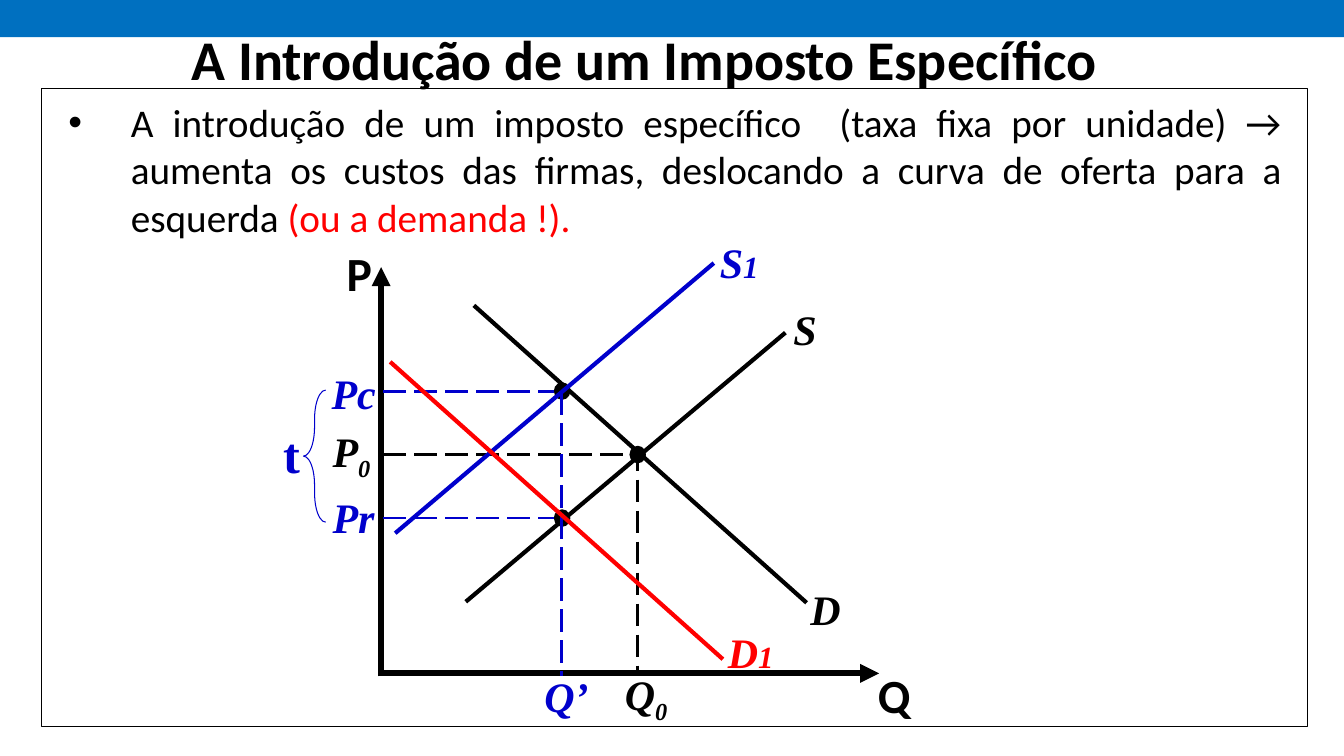
from lxml.etree import SubElement
from pptx import Presentation
from pptx.dml.color import RGBColor
from pptx.enum.dml import MSO_LINE
from pptx.enum.shapes import MSO_CONNECTOR, MSO_SHAPE
from pptx.enum.text import MSO_ANCHOR, MSO_AUTO_SIZE, PP_ALIGN
from pptx.oxml.ns import qn
from pptx.util import Inches, Pt

COLORS = {"band": "0070C0", "black": "000000", "white": "FFFFFF",
          "taxed": "0000CC", "demand": "FF0000"}
CURVE_LABEL = {"name": "Times New Roman", "size": Pt(30), "bold": True, "italic": True}
SMALL_LABEL = {**CURVE_LABEL, "size": Pt(22)}
AXIS_LABEL = {"name": "Calibri", "size": Pt(34), "bold": True}
TAX_LABEL = {"name": "Times New Roman", "size": Pt(36), "bold": True}
BODY = {"name": "Calibri", "size": Pt(28)}
TITLE = {"name": "Calibri", "size": Pt(40), "bold": True}

AXIS_X = 3.8
AXIS_FOOT = 6.71
CURVE_WIDTH = 3
GUIDE_WIDTH = 2
AXIS_WIDTH = 4.5
DOT_WIDTH, DOT_HEIGHT = 0.15, 0.16


def rgb(color):
    return RGBColor.from_string(COLORS[color])


def add_run(paragraph, wording, color, style, baseline=None):
    run = paragraph.add_run()
    run.text = wording
    for attribute, value in style.items():
        setattr(run.font, attribute, value)
    run.font.color.rgb = rgb(color)
    if baseline:
        run._r.get_or_add_rPr().set("baseline", str(baseline))


def add_text(slide, place, wrap=True, anchor=MSO_ANCHOR.TOP, align=PP_ALIGN.LEFT):
    frame = slide.shapes.add_textbox(*map(Inches, place)).text_frame
    settings = {"word_wrap": wrap, "vertical_anchor": anchor,
                "auto_size": MSO_AUTO_SIZE.NONE if wrap else MSO_AUTO_SIZE.SHAPE_TO_FIT_TEXT}
    for attribute, value in settings.items():
        setattr(frame, attribute, value)
    paragraph = frame.paragraphs[0]
    paragraph.alignment = align
    return paragraph


def add_label(slide, place, wording, color="black", style=CURVE_LABEL,
              index="", index_style=CURVE_LABEL, baseline=None):
    paragraph = add_text(slide, place, wrap=False)
    add_run(paragraph, wording, color, style)
    if index:
        add_run(paragraph, index, color, index_style, baseline)


def add_figure(slide, preset, place, fill=None, outline=None, width=1):
    figure = slide.shapes.add_shape(preset, *map(Inches, place))
    figure.shadow.inherit = False
    if fill:
        figure.fill.solid()
        figure.fill.fore_color.rgb = rgb(fill)
    else:
        figure.fill.background()
    if outline:
        figure.line.color.rgb = rgb(outline)
        figure.line.width = Pt(width)
    else:
        figure.line.fill.background()
    return figure


def add_line(slide, start, end, color="black", width=CURVE_WIDTH, dash=None, arrow=False):
    connector = slide.shapes.add_connector(
        MSO_CONNECTOR.STRAIGHT, *map(Inches, (*start, *end)))
    connector.line.color.rgb = rgb(color)
    connector.line.width = Pt(width)
    if dash:
        connector.line.dash_style = dash
    if arrow:
        SubElement(connector.line._get_or_add_ln(), qn("a:tailEnd"), type="triangle")
    SubElement(connector._element.spPr, qn("a:effectLst"))


def add_guide(slide, start, end, color="black"):
    add_line(slide, start, end, color, GUIDE_WIDTH, MSO_LINE.LONG_DASH)


def add_dot(slide, left, top):
    add_figure(slide, MSO_SHAPE.OVAL, (left, top, DOT_WIDTH, DOT_HEIGHT), "black", "black")


def add_initial_market(slide):
    add_line(slide, (4.62, 5.97), (7.79, 3.3))
    add_line(slide, (4.7, 3.03), (8, 5.98))
    add_label(slide, (7.94, 5.74, 0.5, 0.6), "D")
    add_label(slide, (7.77, 2.96, 0.43, 0.6), "S")
    add_line(slide, (3.78, AXIS_FOOT), (3.78, 2.65), width=AXIS_WIDTH, arrow=True)
    add_label(slide, (8.61, 6.56, 0.53, 0.67), "Q", style=AXIS_LABEL)
    add_label(slide, (3.34, 2.37, 0.45, 0.67), "P", style=AXIS_LABEL)
    add_label(slide, (3.2, 4.17, 0.6, 0.6), "P", index="0", baseline=-25000)
    add_guide(slide, (AXIS_X, 4.51), (6.23, 4.51))
    add_guide(slide, (6.32, 4.45), (6.32, AXIS_FOOT))
    add_label(slide, (6.1, 6.58, 0.64, 0.6), "Q", index="0", baseline=-25000)
    add_line(slide, (AXIS_X, 6.68), (8.72, 6.68), width=AXIS_WIDTH, arrow=True)
    for left, top in ((6.25, 4.43), (5.5, 5.06), (5.5, 3.8)):
        add_dot(slide, left, top)


def add_taxed_supply(slide):
    add_guide(slide, (5.57, 3.89), (5.57, AXIS_FOOT), "taxed")
    for price in (3.88, 5.14):
        add_guide(slide, (AXIS_X, price), (5.49, price), "taxed")
    add_line(slide, (3.92, 5.29), (7.08, 2.61), "taxed")
    add_label(slide, (7.04, 2.3, 0.59, 0.6), "S", "taxed", index="1", index_style=SMALL_LABEL)
    for place, wording in (((5.3, 6.6, 0.64, 0.6), "Q’"),
                           ((3.2, 4.83, 0.62, 0.6), "Pr"),
                           ((3.19, 3.6, 0.65, 0.6), "Pc")):
        add_label(slide, place, wording, "taxed")
    add_label(slide, (2.71, 4.15, 0.37, 0.7), "t", "taxed", TAX_LABEL)
    brace = add_figure(slide, MSO_SHAPE.LEFT_BRACE, (3.01, 3.87, 0.22, 1.31),
                       outline="taxed", width=0.75)
    brace.adjustments[0] = 1.31
    brace.adjustments[1] = 0.5


def add_shifted_demand(slide):
    add_line(slide, (3.87, 3.59), (7.17, 6.54), "demand")
    add_label(slide, (7.12, 6.17, 0.66, 0.6), "D", "demand", index="1", index_style=SMALL_LABEL)


def add_explanation(slide):
    paragraph = add_text(slide, (0.58, 0.93, 12.23, 1.51), align=PP_ALIGN.JUSTIFY)
    properties = paragraph._p.get_or_add_pPr()
    properties.set("marL", str(Inches(0.62)))
    properties.set("indent", str(Inches(-0.62)))
    SubElement(properties, qn("a:buFont"), typeface="Arial")
    SubElement(properties, qn("a:buChar"), char="•")
    add_run(paragraph, "A introdução de um imposto específico  (taxa fixa por unidade) → "
            "aumenta os custos das firmas, deslocando a curva de oferta para a esquerda ",
            "black", BODY)
    add_run(paragraph, "(ou a demanda !).", "demand", BODY)


def add_title(slide):
    paragraph = add_text(slide, (0.65, -0.01, 11.48, 1.17),
                         anchor=MSO_ANCHOR.MIDDLE, align=PP_ALIGN.CENTER)
    add_run(paragraph, "A Introdução de um Imposto Específico", "black", TITLE)


def main():
    deck = Presentation()
    deck.slide_width = Inches(13.33)
    deck.slide_height = Inches(7.5)
    slide = deck.slides.add_slide(deck.slide_layouts[6])
    add_figure(slide, MSO_SHAPE.RECTANGLE, (0, -0.03, 13.33, 0.4), "band")
    add_figure(slide, MSO_SHAPE.RECTANGLE, (0.41, 0.88, 12.56, 6.33), "white", "black", 0.75)
    add_initial_market(slide)
    add_taxed_supply(slide)
    add_shifted_demand(slide)
    add_explanation(slide)
    add_title(slide)
    deck.save("out.pptx")


if __name__ == "__main__":
    main()
